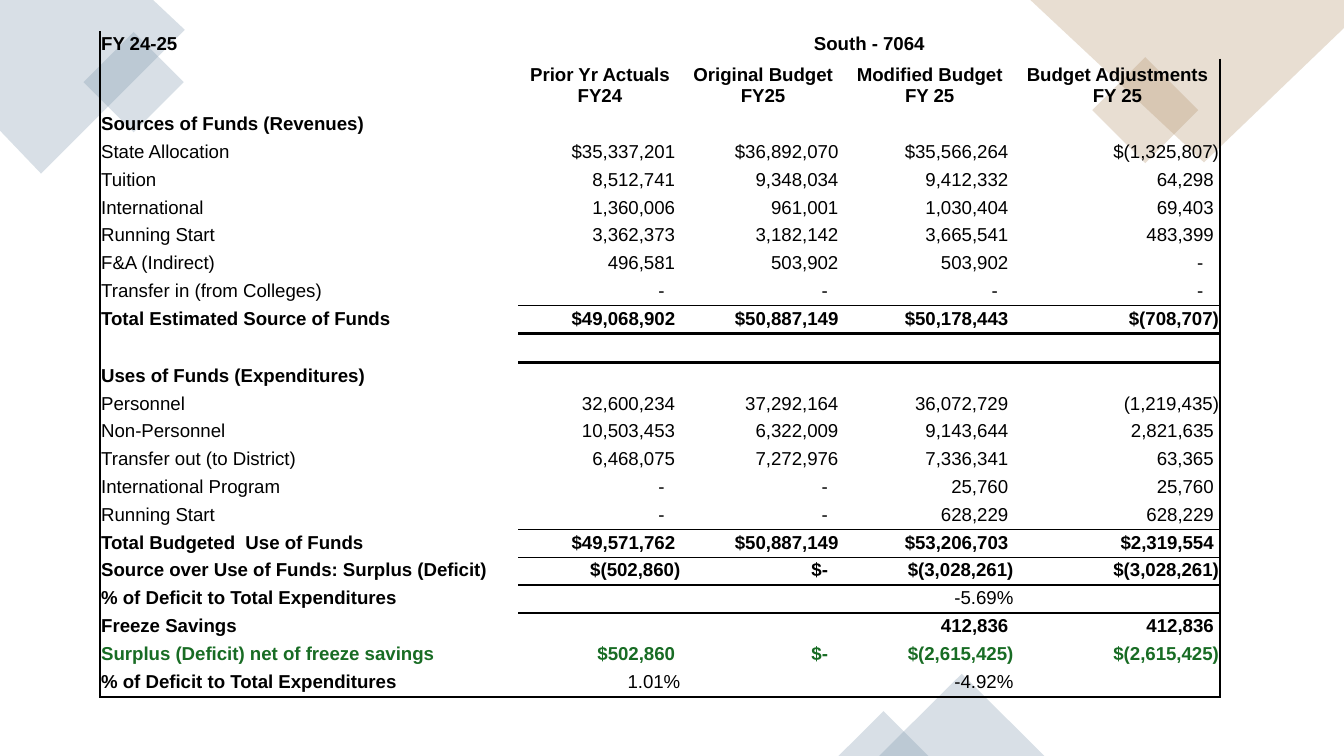
from dataclasses import dataclass

from lxml import etree
from pptx import Presentation
from pptx.dml.color import RGBColor
from pptx.enum.shapes import MSO_SHAPE
from pptx.enum.text import MSO_ANCHOR, PP_ALIGN
from pptx.oxml.ns import qn
from pptx.util import Pt

SQUARE, TRIANGLE = MSO_SHAPE.RECTANGLE, MSO_SHAPE.ISOSCELES_TRIANGLE
LEFT, CENTER, RIGHT = PP_ALIGN.LEFT, PP_ALIGN.CENTER, PP_ALIGN.RIGHT
BOTTOM = MSO_ANCHOR.BOTTOM
NO_GRID_STYLE = "{2D5ABB26-0587-4C30-8999-92F81FD0307C}"


@dataclass(frozen=True)
class Theme:
    font: str = "Arial"
    size: float = 10
    text: str = "000000"
    surplus: str = "186C24"
    blue: str = "7E97AD"
    tan: str = "B4936D"
    opacity: int = 30
    hairline: float = 0.5
    line: float = 1
    heavy: float = 2
    inset: float = 0.72
    bottom_inset: float = 2.16
    digit_gap: float = 2.78  # room kept for a closing bracket


@dataclass(frozen=True)
class Ornament:
    preset: MSO_SHAPE
    left: float
    top: float
    width: float
    height: float
    color: str
    rotation: float = 0


@dataclass(frozen=True)
class Corner:
    points: tuple[tuple[float, float], ...]
    color: str


@dataclass(frozen=True)
class BudgetRow:
    label: str = ""
    amounts: tuple[str, ...] = ("", "", "", "")
    bold: bool = False
    color: str = "000000"
    rule_below: float = 0
    height: float = 14.9
    align: PP_ALIGN = RIGHT


THEME = Theme()

# Decoration, from back to front
DECORATION = (
    Corner(((82, 0), (0, 0), (0, 69.8), (22.3, 92.6), (98.6, 16.2)), THEME.blue),
    Ornament(SQUARE, 52.6, 25, 38, 38, THEME.blue, 315),
    Ornament(SQUARE, 593.5, 38.9, 40.2, 40.2, THEME.tan, 315),
    Corner(((720, 0), (552.2, 0), (644.6, 87.1), (720, 15.2)), THEME.tan),
    Ornament(TRIANGLE, 471, 361, 88.5, 44, THEME.blue),
    Ornament(TRIANGLE, 449.2, 381, 48.2, 24, THEME.blue),
)

# Budget table
TABLE_LEFT, TABLE_TOP = 53.5, 16.5
COLUMN_WIDTHS = (224.2, 87.4, 87.5, 91, 110.1)
ROWS = (
    BudgetRow("FY 24-25", ("South - 7064", "", "", ""), bold=True, align=CENTER),
    BudgetRow("", ("Prior Yr Actuals\vFY24", "Original Budget\vFY25",
                   "Modified Budget\vFY 25", "Budget Adjustments\vFY 25"),
              bold=True, height=28, align=CENTER),
    BudgetRow("Sources of Funds (Revenues)", bold=True),
    BudgetRow("State Allocation", ("$35,337,201", "$36,892,070", "$35,566,264", "$(1,325,807)")),
    BudgetRow("Tuition", ("8,512,741", "9,348,034", "9,412,332", "64,298")),
    BudgetRow("International", ("1,360,006", "961,001", "1,030,404", "69,403")),
    BudgetRow("Running Start", ("3,362,373", "3,182,142", "3,665,541", "483,399")),
    BudgetRow("F&A (Indirect)", ("496,581", "503,902", "503,902", "-")),
    BudgetRow("Transfer in (from Colleges)", ("-", "-", "-", "-"), rule_below=THEME.hairline),
    BudgetRow("Total Estimated Source of Funds",
              ("$49,068,902", "$50,887,149", "$50,178,443", "$(708,707)"),
              bold=True, rule_below=THEME.heavy),
    BudgetRow(height=15.6),
    BudgetRow("Uses of Funds (Expenditures)", bold=True),
    BudgetRow("Personnel", ("32,600,234", "37,292,164", "36,072,729", "(1,219,435)")),
    BudgetRow("Non-Personnel", ("10,503,453", "6,322,009", "9,143,644", "2,821,635")),
    BudgetRow("Transfer out (to District)", ("6,468,075", "7,272,976", "7,336,341", "63,365")),
    BudgetRow("International Program", ("-", "-", "25,760", "25,760")),
    BudgetRow("Running Start", ("-", "-", "628,229", "628,229"), rule_below=THEME.hairline),
    BudgetRow("Total Budgeted  Use of Funds",
              ("$49,571,762", "$50,887,149", "$53,206,703", "$2,319,554"), bold=True),
    BudgetRow("Source over Use of Funds: Surplus (Deficit)",
              ("$(502,860)", "$-", "$(3,028,261)", "$(3,028,261)"),
              bold=True, rule_below=THEME.line),
    BudgetRow("% of Deficit to Total Expenditures", ("", "", "-5.69%", ""), bold=True),
    BudgetRow("Freeze Savings", ("", "", "412,836", "412,836"), bold=True),
    BudgetRow("Surplus (Deficit) net of freeze savings",
              ("$502,860", "$-", "$(2,615,425)", "$(2,615,425)"),
              bold=True, color=THEME.surplus),
    BudgetRow("% of Deficit to Total Expenditures", ("1.01%", "", "-4.92%", ""),
              bold=True, rule_below=THEME.line),
)


def tint(shape, color: str) -> None:
    shape.shadow.inherit = False
    shape.line.fill.background()
    shape.fill.solid()
    shape.fill.fore_color.rgb = RGBColor.from_string(color)
    srgb = shape.fill._xPr.find(".//" + qn("a:srgbClr"))
    etree.SubElement(srgb, qn("a:alpha"), val=str(THEME.opacity * 1000))


def draw_ornament(slide, item: Ornament) -> None:
    shape = slide.shapes.add_shape(item.preset, Pt(item.left), Pt(item.top),
                                   Pt(item.width), Pt(item.height))
    shape.rotation = item.rotation
    tint(shape, item.color)


def draw_corner(slide, item: Corner) -> None:
    start, *others = item.points
    builder = slide.shapes.build_freeform(*start, scale=Pt(1))
    builder.add_line_segments(others, close=True)
    tint(builder.convert_to_shape(), item.color)


def set_borders(cell, widths: dict[str, float]) -> None:
    properties = cell._tc.get_or_add_tcPr()
    for side in ("L", "R", "T", "B"):
        width = widths.get(side, 0)
        if width:
            line = etree.SubElement(properties, qn("a:ln" + side), w=str(Pt(width)))
            fill = etree.SubElement(line, qn("a:solidFill"))
            etree.SubElement(fill, qn("a:srgbClr"), val=THEME.text)


def amount_indent(text: str) -> float:
    if text.endswith("-"):
        return 3 * THEME.digit_gap
    return 0 if text.endswith((")", "%")) else THEME.digit_gap


def write_cell(cell, text: str, row: BudgetRow, align: PP_ALIGN) -> None:
    cell.vertical_anchor = BOTTOM
    cell.margin_left = cell.margin_top = Pt(THEME.inset)
    cell.margin_bottom = Pt(THEME.bottom_inset)
    indent = amount_indent(text) if align == RIGHT else 0
    cell.margin_right = Pt(THEME.inset + indent)
    cell.text_frame.text = text
    paragraph = cell.text_frame.paragraphs[0]
    paragraph.alignment = align
    for run in paragraph.runs:
        run.font.name = THEME.font
        run.font.size = Pt(THEME.size)
        run.font.bold = row.bold and not text.endswith("%")
        run.font.color.rgb = RGBColor.from_string(row.color)
    # The end mark keeps empty cells from stretching their row
    etree.SubElement(paragraph._p, qn("a:endParaRPr"), sz=str(int(THEME.size * 100)))


def draw_budget(slide, rows: tuple[BudgetRow, ...]) -> None:
    frame = slide.shapes.add_table(
        len(rows), len(COLUMN_WIDTHS), Pt(TABLE_LEFT), Pt(TABLE_TOP),
        Pt(sum(COLUMN_WIDTHS)), Pt(sum(row.height for row in rows)))
    table = frame.table
    table.first_row = table.horz_banding = False
    table._tbl.tblPr.find(qn("a:tableStyleId")).text = NO_GRID_STYLE
    for column, width in zip(table.columns, COLUMN_WIDTHS):
        column.width = Pt(width)

    last_row, last_column = len(rows) - 1, len(COLUMN_WIDTHS) - 1
    rule_above = 0
    for r, row in enumerate(rows):
        table.rows[r].height = Pt(row.height)
        for c, text in enumerate((row.label, *row.amounts)):
            cell = table.cell(r, c)
            write_cell(cell, text, row, row.align if c else LEFT)
            ruled = c > 0 or r == last_row
            set_borders(cell, {
                "L": THEME.line if c == 0 else 0,
                "R": THEME.line if c == last_column and r > 0 else 0,
                "T": rule_above if c else 0,
                "B": row.rule_below if ruled else 0,
            })
            cell.fill.background()
        rule_above = row.rule_below
    table.cell(0, 1).merge(table.cell(0, last_column))


def main() -> None:
    deck = Presentation()
    deck.slide_width, deck.slide_height = Pt(720), Pt(405)
    slide = deck.slides.add_slide(deck.slide_layouts[6])
    for item in DECORATION:
        if isinstance(item, Corner):
            draw_corner(slide, item)
        else:
            draw_ornament(slide, item)
    draw_budget(slide, ROWS)
    deck.save("out.pptx")


if __name__ == "__main__":
    main()
